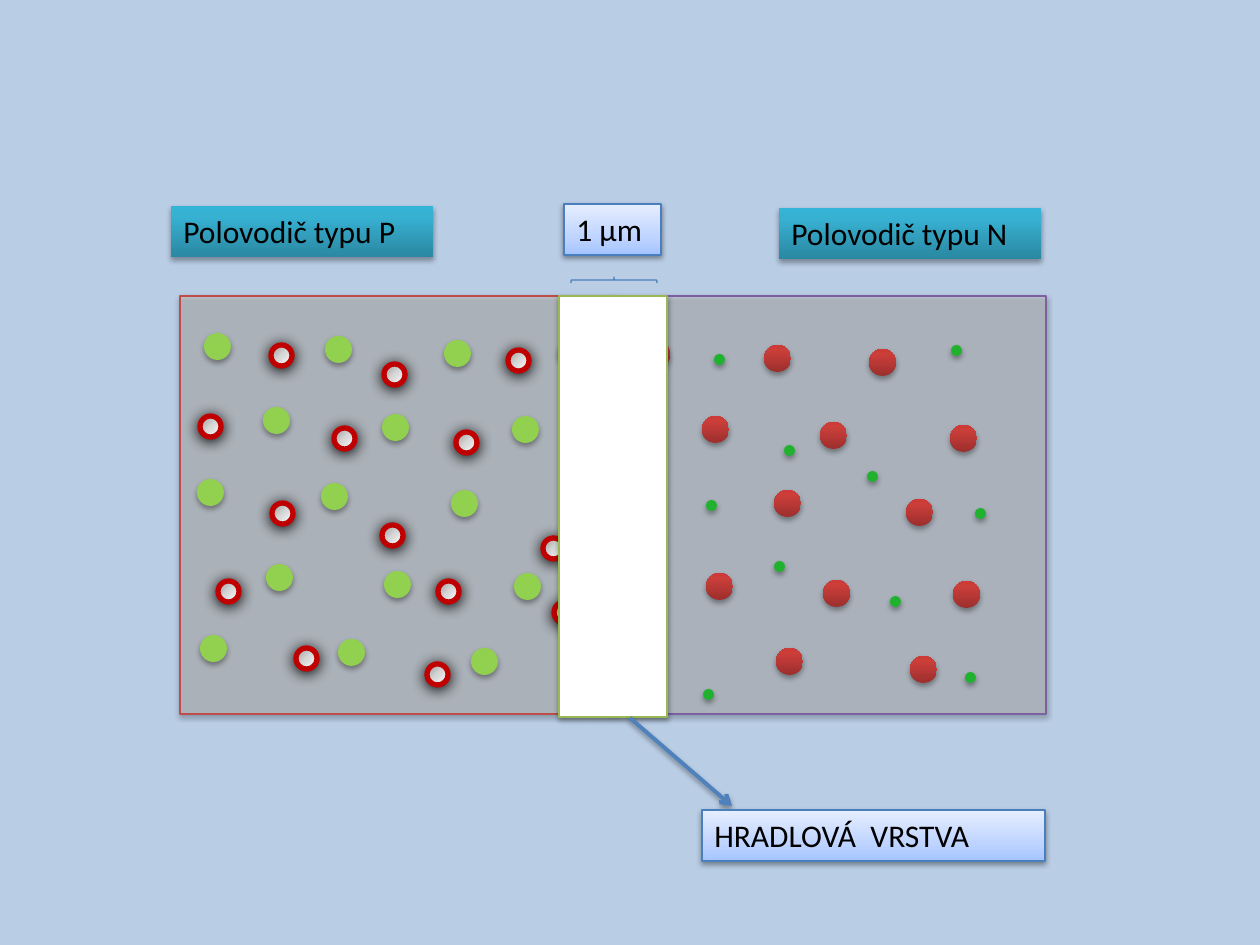
from dataclasses import dataclass

from lxml.etree import SubElement
from pptx import Presentation
from pptx.dml.color import RGBColor
from pptx.enum.shapes import MSO_CONNECTOR, MSO_SHAPE
from pptx.enum.text import MSO_ANCHOR, MSO_AUTO_SIZE, PP_ALIGN
from pptx.oxml.ns import qn
from pptx.util import Emu, Pt

SCALE = 914400 / 126


def px(length):
    return Emu(round(length * SCALE))


@dataclass(frozen=True)
class Shadow:
    opacity: int
    blur: float
    distance: float


@dataclass(frozen=True)
class Gradient:
    stops: tuple
    angle: int


@dataclass(frozen=True)
class Theme:
    font: str = "Calibri"
    label_size: int = 18
    thin: float = 0.75
    medium: float = 2.25
    thick: float = 3
    text: str = "000000"
    background: str = "B9CDE5"
    semiconductor: str = "BFBFBF"
    p_border: str = "BF4C48"
    n_border: str = "7D60A0"
    acceptor: str = "92D050"
    electron: str = "20B22E"
    hole_border: str = "C00000"
    gate: str = "FFFFFF"
    gate_border: str = "98B955"
    blue_border: str = "4B7EBC"
    arrow: str = "4F81BD"
    teal: Gradient = Gradient(((0, "2A88A2"), (80, "37B1D2"), (100, "34B4D6")), 270)
    pale_blue: Gradient = Gradient(((0, "A4C4FF"), (35, "BFD4FF"), (100, "E6EEFF")), 270)
    donor: Gradient = Gradient(((0, "9C2F2D"), (80, "CB3E3A"), (100, "CE3B37")), 270)
    hole: Gradient = Gradient(((0, "979797"), (50, "D7D7D7"), (100, "FFFFFF")), 45)
    soft: Shadow = Shadow(38, 3.1, 1.6)
    firm: Shadow = Shadow(35, 3.1, 1.8)
    glow: Shadow = Shadow(100, 8.5, 1)


def write(box, text, *, font, size, color):
    frame = box.text_frame
    frame.word_wrap = True
    frame.auto_size = MSO_AUTO_SIZE.SHAPE_TO_FIT_TEXT
    frame.vertical_anchor = MSO_ANCHOR.TOP
    para = frame.paragraphs[0]
    para.alignment = PP_ALIGN.LEFT
    span = para.add_run()
    span.text = text
    span.font.name = font
    span.font.size = Pt(size)
    span.font.color.rgb = RGBColor.from_string(color)


class Painter:
    def __init__(self, slide, theme):
        self.slide = slide
        self.theme = theme
        slide.background.fill.solid()
        slide.background.fill.fore_color.rgb = RGBColor.from_string(theme.background)

    def add_gradient(self, properties, gradient):
        fill = SubElement(properties, qn("a:gradFill"), rotWithShape="1")
        properties.insert(2, fill)
        stops = SubElement(fill, qn("a:gsLst"))
        for position, color in gradient.stops:
            stop = SubElement(stops, qn("a:gs"), pos=str(position * 1000))
            SubElement(stop, qn("a:srgbClr"), val=color)
        SubElement(fill, qn("a:lin"), ang=str(gradient.angle * 60000), scaled="0")

    def add_shadow(self, properties, shadow):
        effects = properties.find(qn("a:effectLst"))
        if effects is None:
            effects = SubElement(properties, qn("a:effectLst"))
        if shadow:
            outer = SubElement(
                effects, qn("a:outerShdw"), blurRad=str(Pt(shadow.blur)),
                dist=str(Pt(shadow.distance)), dir="5400000", rotWithShape="0",
            )
            color = SubElement(outer, qn("a:srgbClr"), val="000000")
            SubElement(color, qn("a:alpha"), val=str(shadow.opacity * 1000))

    def shape(self, kind, left, top, width, height, *, fill=None, opacity=100,
              border=None, weight=0.75, shadow=None):
        shape = self.slide.shapes.add_shape(kind, px(left), px(top), px(width), px(height))
        properties = shape._element.spPr
        if isinstance(fill, Gradient):
            self.add_gradient(properties, fill)
        elif fill:
            shape.fill.solid()
            shape.fill.fore_color.rgb = RGBColor.from_string(fill)
            if opacity < 100:
                color = properties.find(qn("a:solidFill"))[0]
                SubElement(color, qn("a:alpha"), val=str(opacity * 1000))
        else:
            shape.fill.background()
        if border:
            shape.line.color.rgb = RGBColor.from_string(border)
            shape.line.width = Pt(weight)
        else:
            shape.line.fill.background()
        shape.shadow.inherit = False
        self.add_shadow(properties, shadow)
        return shape

    def block(self, *bounds, **style):
        return self.shape(MSO_SHAPE.RECTANGLE, *bounds, **style)

    def particles(self, corners, size, **style):
        for left, top in corners:
            self.shape(MSO_SHAPE.OVAL, left, top, size, size, **style)

    def label(self, text, left, top, width, **style):
        box = self.block(left, top, width, 51, **style)
        write(box, text, font=self.theme.font, size=self.theme.label_size,
              color=self.theme.text)

    def width_brace(self, left, top, width, height):
        brace = self.shape(MSO_SHAPE.LEFT_BRACE, left, top, width, height,
                           border=self.theme.blue_border, weight=self.theme.thin)
        brace.rotation = 90
        brace._element.spPr.find(qn("a:xfrm")).set("flipV", "1")

    def arrow(self, start, end):
        line = self.slide.shapes.add_connector(
            MSO_CONNECTOR.STRAIGHT, *map(px, start), *map(px, end))
        line.line.color.rgb = RGBColor.from_string(self.theme.arrow)
        line.line.width = Pt(self.theme.medium)
        properties = line._element.spPr
        SubElement(properties.find(qn("a:ln")), qn("a:tailEnd"), type="arrow")
        self.add_shadow(properties, self.theme.soft)


DONORS = [
    (643, 341), (764, 345), (869, 349), (702, 416), (820, 422), (950, 425), (774, 490),
    (906, 499), (706, 573), (823, 580), (953, 581), (776, 648), (910, 656),
]
ACCEPTORS = [
    (204, 333), (325, 336), (444, 340), (558, 339), (263, 407), (382, 414), (512, 416),
    (197, 479), (321, 483), (451, 490), (266, 564), (384, 571), (514, 573), (200, 635),
    (338, 639), (471, 648),
]
HOLES = [
    (271, 345), (384, 364), (508, 350), (200, 416), (334, 428), (456, 432), (272, 503),
    (382, 525), (543, 538), (218, 581), (438, 581), (554, 602), (296, 648), (427, 664),
]
ELECTRONS = [
    (951, 345), (714, 354), (784, 445), (867, 471), (706, 500), (975, 508), (774, 561),
    (890, 596), (965, 672), (703, 689),
]


def main():
    deck = Presentation()
    deck.slide_width, deck.slide_height = px(1260), px(945)
    page = deck.slides.add_slide(deck.slide_layouts[6])
    theme = Theme()
    painter = Painter(page, theme)

    for left, border, opacity in ((614, theme.n_border, 55), (180, theme.p_border, 61)):
        painter.block(left, 296, 432, 418, fill=theme.semiconductor, opacity=opacity,
                      border=border, shadow=theme.soft)
    painter.particles(DONORS, 27, fill=theme.donor, shadow=theme.firm)
    painter.particles(ACCEPTORS, 27, fill=theme.acceptor, shadow=theme.firm)
    painter.particles(HOLES, 21, fill=theme.hole, border=theme.hole_border,
                      weight=theme.thick, shadow=theme.glow)
    painter.particles(ELECTRONS, 11, fill=theme.electron, shadow=theme.firm)
    painter.label("Polovodič typu P", 171, 206, 262, fill=theme.teal, shadow=theme.firm)
    painter.label("Polovodič typu N", 779, 208, 262, fill=theme.teal, shadow=theme.firm)

    painter.block(559, 296, 108, 421, fill=theme.gate, border=theme.gate_border,
                  shadow=theme.soft)
    painter.arrow((630, 718), (732, 806))
    blue_label = dict(fill=theme.pale_blue, border=theme.blue_border, shadow=theme.soft)
    painter.label("HRADLOVÁ  VRSTVA", 702, 810, 343, **blue_label)
    painter.width_brace(611, 237, 6, 86)
    painter.label("1 μm", 564, 204, 97, **blue_label)
    deck.save("out.pptx")


if __name__ == "__main__":
    main()
